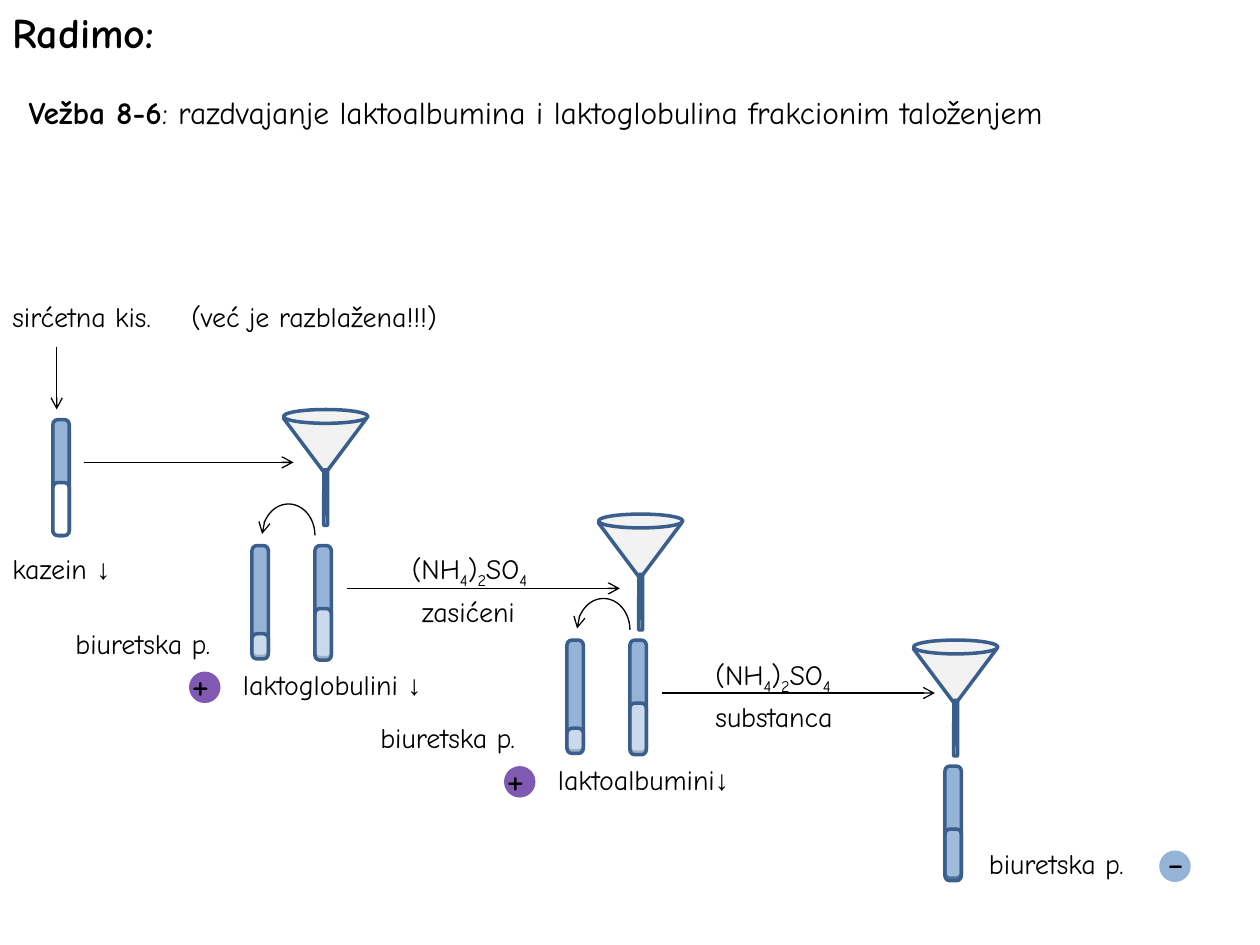
import pptx
import pptx.util
import pptx.dml.color
import pptx.enum.shapes
import pptx.enum.text
from lxml import etree
from pptx.oxml.ns import qn

Inches, Pt = pptx.util.Inches, pptx.util.Pt
RGBColor = pptx.dml.color.RGBColor
MSO = pptx.enum.shapes.MSO_SHAPE

BLACK = RGBColor(0, 0, 0)
WHITE = RGBColor(0xFF, 0xFF, 0xFF)
GLASS = RGBColor(0x95, 0xB3, 0xD7)
EDGE = RGBColor(0x3A, 0x5F, 0x8C)
PAPER = RGBColor(0xF2, 0xF2, 0xF2)
PURPLE = RGBColor(0x80, 0x59, 0xB3)

# Run styles
NORMAL = {"name": "Comic Neue"}
BOLD = {"name": "Comic Neue", "bold": True}
SYMBOL = {"name": "Times New Roman"}
SUB = {"name": "Comic Neue", "sub": True}

DOWN = ("↓", SYMBOL)
BIURET = [("biuretska p.", NORMAL)]
SULFATE = [("(NH", NORMAL), ("4", SUB), (")", NORMAL), ("2", SUB), ("SO", NORMAL), ("4", SUB)]

# Labels: left, top, width, height, size, runs
LABELS = [
    (0, 0, 1.48, 0.51, 24, [("Radimo:", BOLD)]),
    (0.13, 0.69, 9.23, 0.4, 18, [
        ("Vežba 8-6", BOLD),
        (": razdvajanje laktoalbumina i laktoglobulina frakcionim taloženjem", NORMAL)]),
    (0, 2.33, 1.47, 0.37, 16, [("sirćetna kis.", NORMAL)]),
    (1.42, 2.33, 2.35, 0.37, 16, [("(već je razblažena!!!)", NORMAL)]),
    (0, 4.33, 1.04, 0.37, 16, [("kazein ", NORMAL), DOWN]),
    (3.17, 4.33, 1.33, 0.37, 16, SULFATE),
    (3.25, 4.67, 1.03, 0.37, 16, [("zasićeni", NORMAL)]),
    (0.5, 4.92, 1.44, 0.37, 16, BIURET),
    (1.83, 5.25, 1.76, 0.37, 16, [("laktoglobulini ", NORMAL), DOWN]),
    (5.58, 5.17, 1.33, 0.37, 16, SULFATE),
    (5.58, 5.5, 1.24, 0.37, 16, [("substanca", NORMAL)]),
    (2.92, 5.67, 1.44, 0.37, 16, BIURET),
    (4.33, 6, 1.68, 0.37, 16, [("laktoalbumini", NORMAL), DOWN]),
    (7.75, 6.67, 1.44, 0.37, 16, BIURET),
]
FUNNELS = [(2.25, 3.25), (4.75, 4.08), (7.25, 5.08)]
# Tubes: left, top, height, content height, content opacity in percent
TUBES = [
    (0.42, 3.33, 0.92, 0.42, 100),
    (2.5, 4.33, 0.91, 0.41, 50),
    (2, 4.33, 0.9, 0.2, 50),
    (5, 5.08, 0.91, 0.41, 50),
    (4.5, 5.08, 0.9, 0.2, 50),
    (7.5, 6.08, 0.91, 0.41, 12),
]
ARROWS = [
    (0.45, 2.75, 0.45, 3.25),
    (0.67, 3.67, 2.33, 3.67),
    (2.75, 4.67, 4.92, 4.67),
    (5.25, 5.5, 7.42, 5.5),
]
ARCS = [(2.08, 4), (4.58, 4.75)]
# Test results: circle left, top, colour, then sign, sign left, top, width
RESULTS = [
    (1.5, 5.33, PURPLE, "+", 1.42, 5.17, 0.36),
    (4, 6.08, PURPLE, "+", 3.92, 5.92, 0.36),
    (9.2, 6.75, GLASS, "-", 9.17, 6.58, 0.34),
]


def add_part(shapes, kind, box, fill=None, line=None, width=2):
    sp = shapes.add_shape(kind, *map(Inches, box))
    sp.shadow.inherit = False
    for fmt, color in ((sp.fill, fill), (sp.line.fill, line)):
        if color is None:
            fmt.background()
        else:
            fmt.solid()
            fmt.fore_color.rgb = color
    if line is not None:
        sp.line.width = Pt(width)
    return sp


def add_arrowhead(sp, end):
    etree.SubElement(sp.line._get_or_add_ln(), qn(end), type="arrow")


def add_label(shapes, left, top, width, height, size, runs):
    tf = shapes.add_textbox(*map(Inches, (left, top, width, height))).text_frame
    tf.word_wrap = False
    tf.auto_size = pptx.enum.text.MSO_AUTO_SIZE.SHAPE_TO_FIT_TEXT
    p = tf.paragraphs[0]
    for text, style in runs:
        r = p.add_run()
        r.text = text
        r.font.size = Pt(size)
        r.font.color.rgb = BLACK
        for key, value in style.items():
            if key == "sub":
                r.font._element.set("baseline", "-25000")
            else:
                setattr(r.font, key, value)


def add_funnel(shapes, left, top):
    group = shapes.add_group_shape().shapes
    cone = add_part(group, MSO.ISOSCELES_TRIANGLE, (left, top + 0.07, 0.66, 0.44), PAPER, EDGE)
    cone.rotation = 180
    add_part(group, MSO.OVAL, (left, top, 0.67, 0.11), PAPER, EDGE)
    add_part(group, MSO.ROUNDED_RECTANGLE, (left + 0.32, top + 0.48, 0.03, 0.44), PAPER, EDGE)


def add_tube(shapes, left, top, height, content, opacity):
    group = shapes.add_group_shape().shapes
    # A translucent content reaches slightly below the glass
    glass_height = height if opacity == 100 else height - 0.02
    glass = (left, top, 0.13, glass_height)
    liquid = (left, top + height - content, 0.13, content)
    for box, fill in ((glass, GLASS), (liquid, WHITE)):
        sp = add_part(group, MSO.ROUNDED_RECTANGLE, box, fill, EDGE)
        sp.adjustments[0] = 0.3
    if opacity < 100:
        color = sp.fill._xPr.find(qn("a:solidFill"))[0]
        etree.SubElement(color, qn("a:alpha"), val=str(opacity * 1000))


def add_arrow(shapes, x1, y1, x2, y2):
    line = shapes.add_connector(pptx.enum.shapes.MSO_CONNECTOR.STRAIGHT,
                                *map(Inches, (x1, y1, x2, y2)))
    line.line.color.rgb = BLACK
    line.line.width = Pt(0.75)
    add_arrowhead(line, "a:tailEnd")
    etree.SubElement(line._element.spPr, qn("a:effectLst"))


def main():
    prs = pptx.Presentation()
    prs.slide_width, prs.slide_height = Inches(10), Inches(7.5)
    shapes = prs.slides.add_slide(prs.slide_layouts[6]).shapes

    # Glassware
    for funnel in FUNNELS:
        add_funnel(shapes, *funnel)
    for tube in TUBES:
        add_tube(shapes, *tube)

    # Straight and curved arrows
    for arrow in ARROWS:
        add_arrow(shapes, *arrow)
    for left, top in ARCS:
        arc = add_part(shapes, MSO.ARC, (left, top, 0.42, 0.5), line=BLACK, width=0.75)
        arc.adjustments[0], arc.adjustments[1] = 109.84, 0
        add_arrowhead(arc, "a:headEnd")

    # Biuret test results
    for x, y, color, sign, left, top, width in RESULTS:
        add_part(shapes, MSO.OVAL, (x, y, 0.25, 0.25), color)
        add_label(shapes, left, top, width, 0.51, 24, [(sign, NORMAL)])

    # Text
    for label in LABELS:
        add_label(shapes, *label)

    prs.save("out.pptx")


if __name__ == "__main__":
    main()
